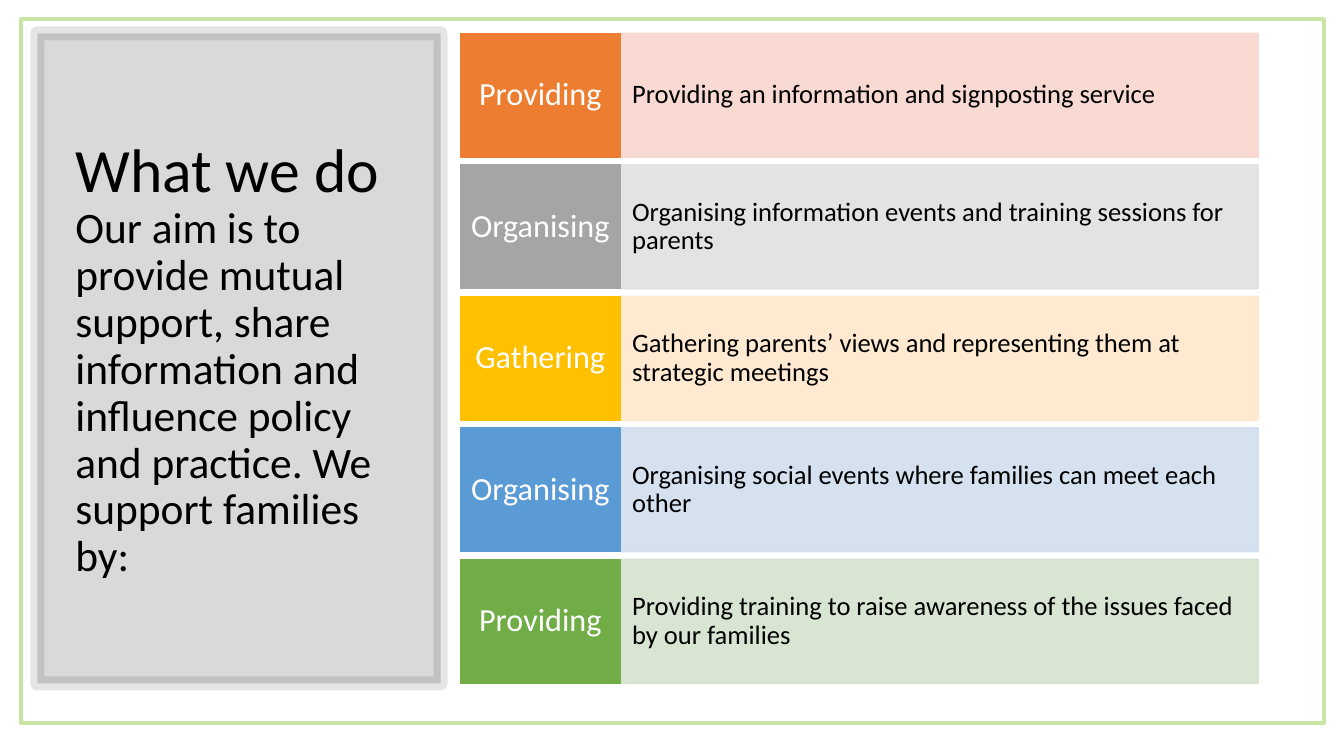
from lxml import etree
from pptx import Presentation
from pptx import util as u
from pptx.dml.color import RGBColor
from pptx.enum import shapes, text
from pptx.oxml.ns import qn

FONT = "Calibri"
COLORS = {
    "black": "000000", "white": "FFFFFF", "frame": "C7E6A4",
    "orange": "ED7D31", "orange_tint": "F8D7CE",
    "grey": "A5A5A5", "grey_tint": "E1E1E1",
    "gold": "FFC000", "gold_tint": "FFE8CC",
    "blue": "5B9BD5", "blue_tint": "D2DEEF",
    "green": "70AD47", "green_tint": "D5E3CF",
}
ACTIVITIES = [
    ("Providing", "Providing an information and signposting service", "orange"),
    ("Organising", "Organising information events and training sessions for parents", "grey"),
    ("Gathering", "Gathering parents’ views and representing them at strategic meetings", "gold"),
    ("Organising", "Organising social events where families can meet each other", "blue"),
    ("Providing", "Providing training to raise awareness of the issues faced by our families", "green"),
]
TOP, ROW_HEIGHT, ROW_PITCH = 0.33, 1.23, 1.305
LABEL_LEFT, LABEL_WIDTH, DETAIL_WIDTH = 4.57, 1.58, 6.33


def rgb(name):
    return RGBColor.from_string(COLORS[name])


def set_alpha(fill_parent, percent):
    color = fill_parent.find(qn("a:solidFill"))[0]
    etree.SubElement(color, qn("a:alpha")).set("val", str(percent * 1000))


def add_box(s, box, fill=None, line=None, width=1, fill_alpha=100, line_alpha=100):
    sp = s.shapes.add_shape(shapes.MSO_SHAPE.RECTANGLE, *map(u.Inches, box))
    sp.shadow.inherit = False
    if fill:
        sp.fill.solid()
        sp.fill.fore_color.rgb = rgb(fill)
        if fill_alpha < 100:
            set_alpha(sp.fill._xPr, fill_alpha)
    else:
        sp.fill.background()
    sp.line.color.rgb = rgb(line or fill)
    sp.line.width = u.Pt(width)
    if line_alpha < 100:
        set_alpha(sp.line._ln, line_alpha)
    return sp


def style_text(sp, color, align, insets=(0.1, 0.05)):
    tf = sp.text_frame
    tf.word_wrap = True
    tf.vertical_anchor = text.MSO_ANCHOR.MIDDLE
    tf.margin_left = tf.margin_right = u.Inches(insets[0])
    tf.margin_top = tf.margin_bottom = u.Inches(insets[1])
    p = tf.paragraphs[0]
    p.alignment = align
    p.line_spacing = 0.9
    p.font.name = FONT
    p.font.color.rgb = rgb(color)
    return p


def add_title(s, box, heading, aim):
    sp = s.shapes.add_textbox(*map(u.Inches, box))
    p = style_text(sp, "black", text.PP_ALIGN.LEFT)
    r = p.add_run()
    r.text, r.font.size = heading, u.Pt(44)
    p.add_line_break()
    r = p.add_run()
    r.text, r.font.size = aim, u.Pt(31)


def add_cell(s, box, words, size, fill, color, align, insets, alpha=100):
    sp = add_box(s, box, fill, fill_alpha=alpha, line_alpha=alpha)
    p = style_text(sp, color, align, insets)
    p.add_run().text = words
    p.font.size = u.Pt(size)


def add_activity(s, top, label, detail, color):
    add_cell(s, (LABEL_LEFT + LABEL_WIDTH, top, DETAIL_WIDTH, ROW_HEIGHT), detail, 19,
             color + "_tint", "black", text.PP_ALIGN.LEFT, (0.12, 0.31), 90)
    add_cell(s, (LABEL_LEFT, top, LABEL_WIDTH, ROW_HEIGHT), label, 23,
             color, "white", text.PP_ALIGN.CENTER, (0.08, 0.12))


def main():
    """Build the slide that says what the group does for families."""
    prs = Presentation()
    prs.slide_width, prs.slide_height = u.Inches(13.33), u.Inches(7.5)
    s = prs.slides.add_slide(prs.slide_layouts[6])
    add_box(s, (0.37, TOP, 4, 6.45), "black", width=10, fill_alpha=15, line_alpha=10)
    add_title(s, (0.65, 0.7, 3.46, 5.75), "What we do",
              "Our aim is to provide mutual support, share information and "
              "influence policy and practice. We support families by:")
    add_box(s, (0.21, 0.19, 12.92, 6.98), line="frame", width=3)
    for i, activity in enumerate(ACTIVITIES):
        add_activity(s, TOP + i * ROW_PITCH, *activity)
    prs.save("out.pptx")


if __name__ == "__main__":
    main()
